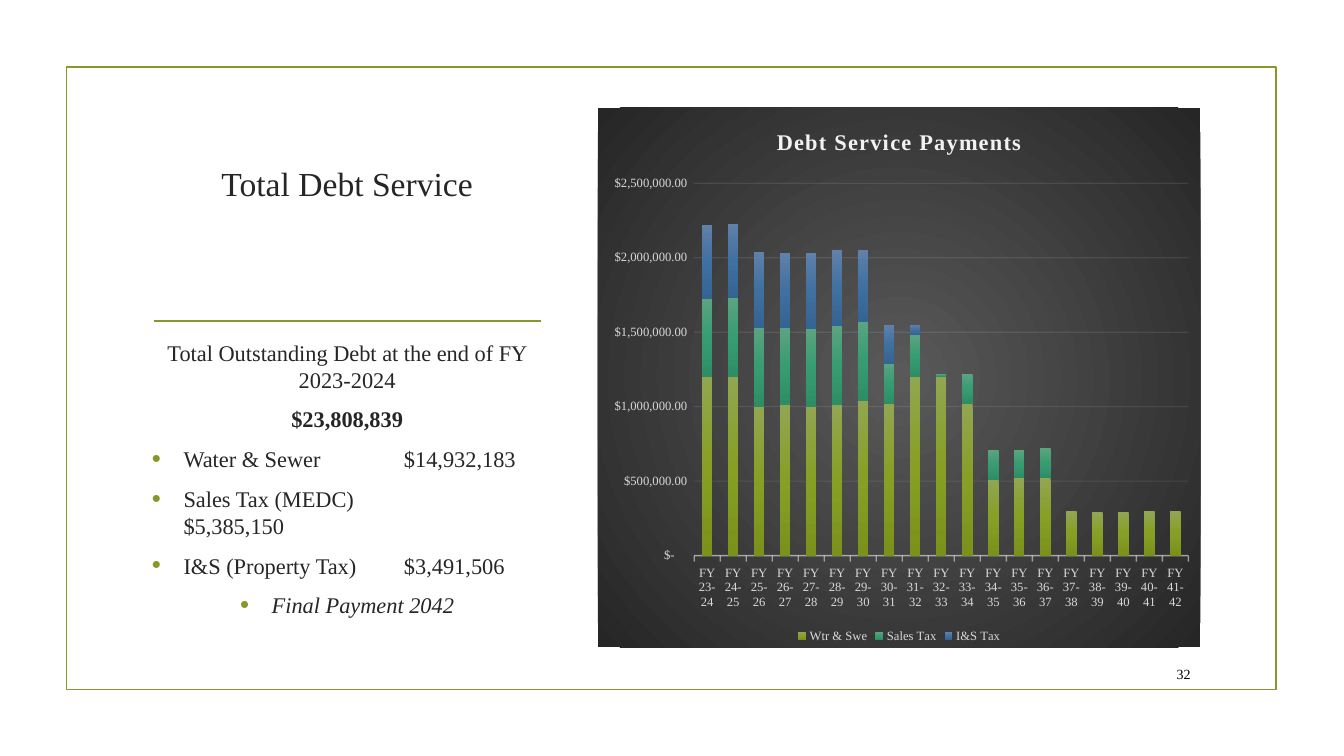
from lxml.etree import SubElement
from pptx import Presentation
from pptx.chart.data import CategoryChartData
from pptx.dml.color import RGBColor
from pptx.enum.chart import XL_CHART_TYPE, XL_LEGEND_POSITION, XL_TICK_MARK
from pptx.enum.shapes import MSO_CONNECTOR, MSO_SHAPE
from pptx.enum.text import MSO_ANCHOR, PP_ALIGN
from pptx.oxml import parse_xml
from pptx.oxml.ns import nsdecls, qn
from pptx.util import Pt

FONT = "Times New Roman"
GREEN, DARK, PALE, WHITE = "83992A", "262626", "D9D9D9", "F2F2F2"
MONEY = '_("$"* #,##0.00_);_("$"* \\(#,##0.00\\);_("$"* "-"??_);_(@_)'

# Payments in dollars, each series with its gradient from top to bottom
YEARS = [f"FY {year}-{year + 1}" for year in range(23, 42)]
K = 1000
SERIES = [
    ("Wtr & Swe", ("92A652", "869F24", "7A921B"),
     [1200, 1200, 1000, 1010, 1000, 1010, 1040, 1020, 1200, 1200,
      1020, 510, 520, 520, 300, 290, 290, 300, 300]),
    ("Sales Tax", ("5BA481", "379C71", "2D8E65"),
     [520, 530, 530, 520, 520, 530, 530, 270, 280, 20, 200, 200, 190, 200]),
    ("I&S Tax", ("6081A9", "4070A1", "356393"),
     [500, 500, 510, 500, 510, 510, 480, 260, 70, 0, 0, 0, 0, 0]),
]


def color(value):
    return RGBColor.from_string(value)


def set_font(font, size, value, bold=None, italic=None):
    font.name, font.size = FONT, Pt(size)
    font.bold, font.italic = bold, italic
    font.color.rgb = color(value)


def set_line(line, value, width):
    line.color.rgb = color(value)
    line.width = Pt(width)


def gradient(colors, direction):
    last = len(colors) - 1
    stops = "".join(
        f'<a:gs pos="{100000 * index // last}"><a:srgbClr val="{value}"/></a:gs>'
        for index, value in enumerate(colors))
    return (f'<a:gradFill {nsdecls("a")} rotWithShape="1">'
            f'<a:gsLst>{stops}</a:gsLst>{direction}</a:gradFill>')


def add_frame(slide, left, top, width, height):
    shape = slide.shapes.add_shape(
        MSO_SHAPE.RECTANGLE, Pt(left), Pt(top), Pt(width), Pt(height))
    shape.shadow.inherit = False
    shape.fill.background()
    set_line(shape.line, GREEN, 1.25)


def add_rule(slide, left, right, top):
    connector = slide.shapes.add_connector(
        MSO_CONNECTOR.STRAIGHT, Pt(left), Pt(top), Pt(right), Pt(top))
    set_line(connector.line, GREEN, 1.25)
    SubElement(connector.element.spPr, qn("a:effectLst"))


def add_text_box(slide, left, top, width, height, anchor):
    box = slide.shapes.add_textbox(Pt(left), Pt(top), Pt(width), Pt(height))
    box.text_frame.word_wrap = True
    box.text_frame.vertical_anchor = anchor
    return box.text_frame


def add_label(slide, text, place, size, value, anchor, align):
    paragraph = add_text_box(slide, *place, anchor).paragraphs[0]
    paragraph.text, paragraph.alignment = text, align
    set_font(paragraph.font, size, value)


def add_bullet(paragraph):
    properties = paragraph._p.get_or_add_pPr()
    properties.set("marL", str(Pt(22.5)))
    properties.set("indent", str(-Pt(22.5)))
    bullet_color = SubElement(properties, qn("a:buClr"))
    SubElement(bullet_color, qn("a:srgbClr"), val=GREEN)
    SubElement(properties, qn("a:buSzPct"), val="115000")
    SubElement(properties, qn("a:buFont"), typeface="Arial")
    SubElement(properties, qn("a:buChar"), char="•")


def add_summary(slide, place, rows):
    frame = add_text_box(slide, *place, MSO_ANCHOR.TOP)
    for index, (text, centred, bulleted, bold, italic) in enumerate(rows):
        paragraph = frame.add_paragraph() if index else frame.paragraphs[0]
        paragraph.text = text
        paragraph.alignment = PP_ALIGN.CENTER if centred else PP_ALIGN.LEFT
        if index:
            paragraph.space_before = Pt(3.2)
        paragraph.space_after = Pt(6)
        if bulleted:
            add_bullet(paragraph)
        set_font(paragraph.font, 16, DARK, bold, italic)


def style_axes(chart):
    years, dollars = chart.category_axis, chart.value_axis
    for axis in (years, dollars):
        set_font(axis.tick_labels.font, 9, PALE)
        axis.minor_tick_mark = XL_TICK_MARK.NONE
    years.major_tick_mark = XL_TICK_MARK.OUTSIDE
    set_line(years.format.line, WHITE, 1)
    dollars.major_tick_mark = XL_TICK_MARK.NONE
    dollars.format.line.fill.background()
    dollars.minimum_scale, dollars.maximum_scale = 0, 2500 * K
    dollars.major_unit = 500 * K
    dollars.tick_labels.number_format = MONEY
    dollars.tick_labels.number_format_is_linked = False
    set_line(dollars.major_gridlines.format.line, WHITE, 0.75)

    # Line opacity, and upright labels that wrap
    for query, opacity in (("c:catAx/c:spPr", 54), ("c:majorGridlines", 10)):
        for node in chart.element.xpath(f".//{query}//a:srgbClr"):
            SubElement(node, qn("a:alpha"), val=str(opacity * 1000))
    for body in chart.element.xpath(".//c:catAx/c:txPr/a:bodyPr"):
        body.set("rot", "0")
        body.set("vert", "horz")


def style_chart_area(chart):
    circle = ('<a:path path="circle"><a:fillToRect l="50000" t="50000" '
              'r="50000" b="50000"/></a:path>')
    area = parse_xml(
        f'<c:spPr {nsdecls("c", "a")}>{gradient(("595959", DARK), circle)}'
        '<a:ln><a:noFill/></a:ln></c:spPr>')
    chart.element.find(qn("c:chart")).addnext(area)

    # Inner plot area as shares of the chart
    shares = "".join(
        f'<c:{name} val="{share}"/>'
        for name, share in (("x", 0.16), ("y", 0.14), ("w", 0.82), ("h", 0.69)))
    layout = parse_xml(
        f'<c:layout {nsdecls("c")}><c:manualLayout><c:layoutTarget val="inner"/>'
        f'<c:xMode val="edge"/><c:yMode val="edge"/>{shares}'
        '</c:manualLayout></c:layout>')
    plot_area = chart.element.xpath(".//c:plotArea")[0]
    for old in plot_area.findall(qn("c:layout")):
        plot_area.remove(old)
    plot_area.insert(0, layout)


def add_payments_chart(slide, left, top, width, height):
    data = CategoryChartData(number_format=MONEY)
    data.categories = YEARS
    for name, _, thousands in SERIES:
        blanks = [None] * (len(YEARS) - len(thousands))
        data.add_series(name, [value * K for value in thousands] + blanks)
    chart = slide.shapes.add_chart(
        XL_CHART_TYPE.COLUMN_STACKED, Pt(left), Pt(top), Pt(width), Pt(height),
        data).chart
    set_font(chart.font, 10, "000000")

    # Title and legend
    title = chart.chart_title.text_frame
    title.text = "Debt Service Payments"
    set_font(title.paragraphs[0].font, 16, WHITE, True)
    title.paragraphs[0].font._element.set("spc", "100")
    chart.has_legend = True
    chart.legend.position = XL_LEGEND_POSITION.BOTTOM
    chart.legend.include_in_layout = False
    set_font(chart.legend.font, 9, PALE)

    # Columns
    plot = chart.plots[0]
    plot.gap_width, plot.overlap, plot.vary_by_categories = 150, 100, False
    downward = '<a:lin ang="5400000" scaled="0"/>'
    for series, (_, colors, _) in zip(plot.series, SERIES):
        series.invert_if_negative = False
        series.format.fill.gradient()
        old = series._element.xpath("c:spPr/a:gradFill")[0]
        old.getparent().replace(old, parse_xml(gradient(colors, downward)))
    style_axes(chart)
    style_chart_area(chart)


def main():
    presentation = Presentation()
    presentation.slide_width, presentation.slide_height = Pt(960), Pt(540)
    slide = presentation.slides.add_slide(presentation.slide_layouts[6])

    # Frame and divider
    add_frame(slide, 47.5, 48, 864, 444.5)
    add_rule(slide, 110, 386.5, 229.5)

    # Left column: text, centred, bulleted, bold, italic
    add_label(slide, "Total Debt Service", (101.5, 74, 293, 75), 24, DARK,
              MSO_ANCHOR.BOTTOM, PP_ALIGN.CENTER)
    add_summary(slide, (101.5, 238.5, 293, 224), [
        ("Total Outstanding Debt at the end of FY 2023-2024", True, False, False, False),
        ("$23,808,839", True, False, True, False),
        ("Water & Sewer\t\t$14,932,183", False, True, False, False),
        ("Sales Tax (MEDC) \t\t$5,385,150", False, True, False, False),
        ("I&S (Property Tax) \t$3,491,506", False, True, False, False),
        ("Final Payment 2042", True, True, False, True),
    ])

    # Chart and slide number
    add_payments_chart(slide, 427, 77, 430.5, 385.5)
    add_label(slide, "32", (815, 470, 42.5, 22.5), 10, "000000",
              MSO_ANCHOR.MIDDLE, PP_ALIGN.RIGHT)
    presentation.save("out.pptx")


if __name__ == "__main__":
    main()
